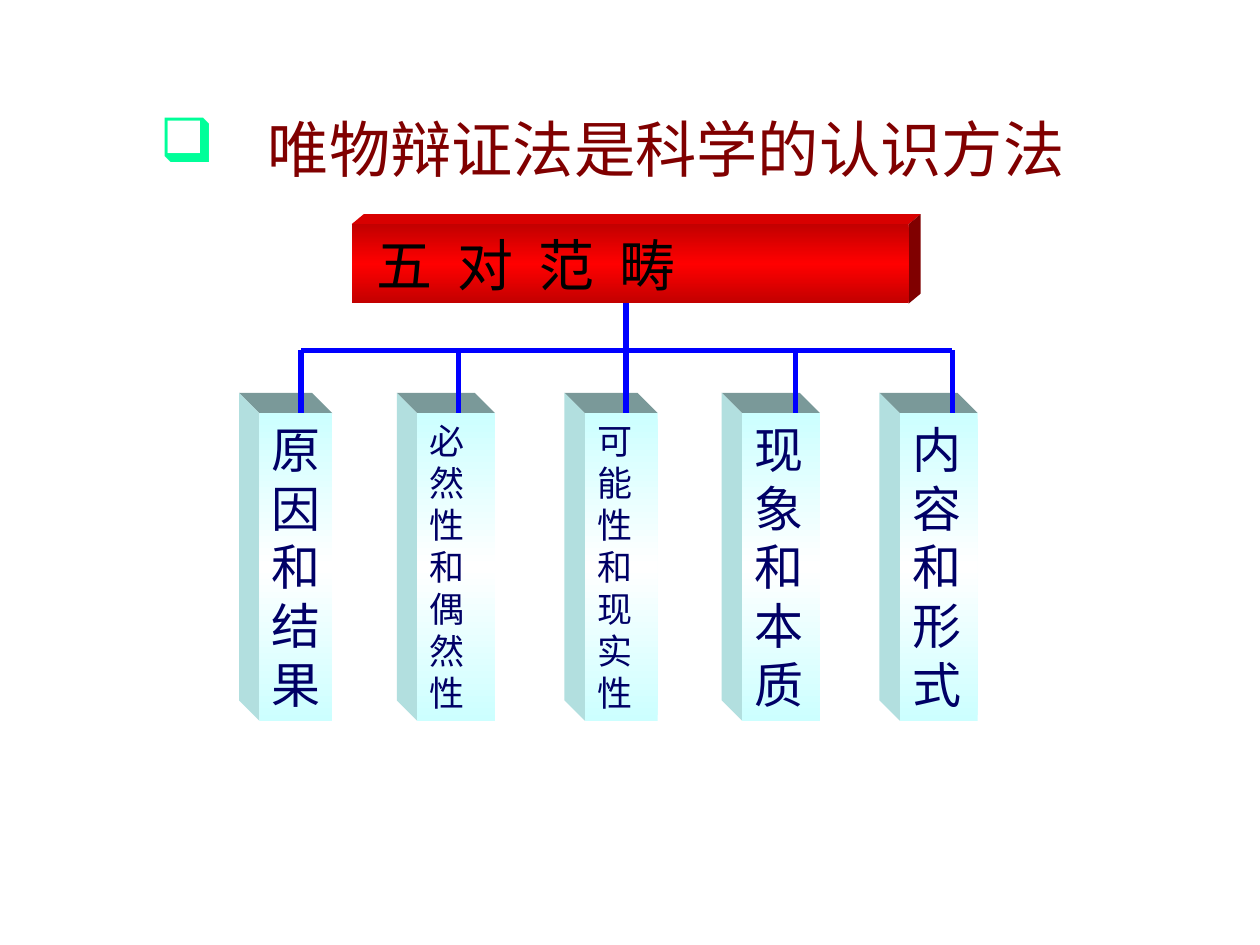
from copy import deepcopy

from pptx import Presentation
from pptx.dml.color import RGBColor
from pptx.enum.shapes import MSO_CONNECTOR, MSO_SHAPE
from pptx.enum.text import MSO_ANCHOR, PP_ALIGN
from pptx.oxml.ns import qn
from pptx.util import Cm, Pt
from lxml.etree import SubElement

BLACK = RGBColor(0x00, 0x00, 0x00)
MAROON = RGBColor(0x80, 0x00, 0x00)
MINT = RGBColor(0x00, 0xFF, 0x99)
BLUE = RGBColor(0x00, 0x00, 0xFF)
NAVY = RGBColor(0x00, 0x00, 0x66)
RED = RGBColor(0xFF, 0x00, 0x00)
DARK_RED = RGBColor(0xC2, 0x00, 0x00)
BANNER_TOP = RGBColor(0xD8, 0x00, 0x00)
BANNER_SIDE = RGBColor(0x80, 0x00, 0x00)
WHITE = RGBColor(0xFF, 0xFF, 0xFF)
PALE_CYAN = RGBColor(0xCC, 0xFF, 0xFF)
PILLAR_TOP = RGBColor(0x7A, 0x99, 0x99)
PILLAR_SIDE = RGBColor(0xB2, 0xDF, 0xDF)
CJK_FONT = "Noto Sans CJK SC"
LATIN_FONT = "Times New Roman"

PILLAR_TOP_Y = 8.33
PILLAR_HEIGHT = 6.2
BRANCH_Y = 7.06
PILLARS = [
    ("原因和结果", 5.23, 1.47, 6.07, 28),
    ("必然性和偶然性", 8.41, 1.57, 9.25, 20),
    ("可能性和现实性", 11.79, 1.47, 12.62, 20),
    ("现象和本质", 14.96, 1.57, 16.03, 28),
    ("内容和形式", 18.14, 1.57, 19.2, 28),
]


def style_text(frame, text, font_name, size, color):
    frame.word_wrap = True
    frame.vertical_anchor = MSO_ANCHOR.TOP
    paragraph = frame.paragraphs[0]
    paragraph.text = text
    paragraph.alignment = PP_ALIGN.LEFT
    run = paragraph.runs[0]
    run.font.name = font_name
    run.font.size = Pt(size)
    run.font.color.rgb = color
    SubElement(run.font._element, qn("a:ea")).set("typeface", CJK_FONT)
    return paragraph


def add_face(slide, points, color):
    corners = [(Cm(x), Cm(y)) for x, y in points]
    builder = slide.shapes.build_freeform(*corners[0])
    builder.add_line_segments(corners[1:], close=True)
    face = builder.convert_to_shape()
    face.shadow.inherit = False
    face.fill.solid()
    face.fill.fore_color.rgb = color
    face.line.fill.background()


def add_front(slide, left, top, width, height, edge, middle):
    front = slide.shapes.add_shape(
        MSO_SHAPE.RECTANGLE, Cm(left), Cm(top), Cm(width), Cm(height))
    front.shadow.inherit = False
    front.line.fill.background()
    front.fill.gradient()
    front.fill.gradient_angle = 90
    stop_list = front._element.spPr.find(".//" + qn("a:gsLst"))
    stop_list.append(deepcopy(stop_list[0]))
    for stop, position, color in zip(
            front.fill.gradient_stops, (0, 0.5, 1), (edge, middle, edge)):
        stop.position = position
        stop.color.rgb = color
    return front


def add_branch(slide, x1, y1, x2, y2):
    branch = slide.shapes.add_connector(
        MSO_CONNECTOR.STRAIGHT, Cm(x1), Cm(y1), Cm(x2), Cm(y2))
    branch.line.color.rgb = BLUE
    branch.line.width = Pt(3)
    SubElement(branch._element.spPr, qn("a:effectLst"))


def add_heading(slide, left, top, width, height):
    heading = slide.shapes.add_textbox(Cm(left), Cm(top), Cm(width), Cm(height))
    paragraph_props = heading.text_frame.paragraphs[0]._p.get_or_add_pPr()
    paragraph_props.set("marL", str(Cm(2.18)))
    paragraph_props.set("indent", str(-Cm(2.18)))
    bullet_color = SubElement(paragraph_props, qn("a:buClr"))
    SubElement(bullet_color, qn("a:srgbClr")).set("val", str(MINT))
    SubElement(paragraph_props, qn("a:buChar")).set("char", "❑")
    style_text(heading.text_frame, "唯物辩证法是科学的认识方法",
               "Noto Sans CJK JP", 35, MAROON)


def add_banner(slide, left, top, width, height):
    right, bottom = left + width, top + height
    depth_x, depth_y = 0.24, 0.2
    add_face(slide, [(left, top), (left + depth_x, top - depth_y),
                     (right + depth_x, top - depth_y), (right, top)], BANNER_TOP)
    add_face(slide, [(right, top), (right + depth_x, top - depth_y),
                     (right + depth_x, bottom - depth_y), (right, bottom)],
             BANNER_SIDE)
    front = add_front(slide, left, top, width, height, DARK_RED, RED)
    front.text_frame.margin_left = Cm(0.5)
    paragraph = style_text(front.text_frame, "五 对 范 畴", CJK_FONT, 32, BLACK)
    front.text_frame.vertical_anchor = MSO_ANCHOR.MIDDLE
    paragraph.runs[0].font._element.set("spc", "360")


def add_pillar(slide, left, top, width, height, category, size):
    right, bottom, depth = left + width, top + height, 0.41
    add_face(slide, [(left, top), (left - depth, top - depth),
                     (right - depth, top - depth), (right, top)], PILLAR_TOP)
    add_face(slide, [(left, top), (left - depth, top - depth),
                     (left - depth, bottom - depth), (left, bottom)], PILLAR_SIDE)
    front = add_front(slide, left, top, width, height, PALE_CYAN, WHITE)
    paragraph = style_text(front.text_frame, category, LATIN_FONT, size, NAVY)
    paragraph.line_spacing = Pt(size * 1.2)


def add_tree(slide):
    drops = [drop for _, _, _, drop, _ in PILLARS]
    add_branch(slide, drops[2], 6, drops[2], BRANCH_Y)
    add_banner(slide, 7.09, 4.52, 11.23, 1.6)
    for category, left, width, _, size in PILLARS:
        add_pillar(slide, left, PILLAR_TOP_Y, width, PILLAR_HEIGHT, category, size)
    add_branch(slide, drops[0], BRANCH_Y, drops[-1], BRANCH_Y)
    for drop in drops:
        add_branch(slide, drop, BRANCH_Y, drop, PILLAR_TOP_Y)


def main():
    presentation = Presentation()
    presentation.slide_width = Cm(25.4)
    presentation.slide_height = Cm(19.05)
    slide = presentation.slides.add_slide(presentation.slide_layouts[6])
    add_tree(slide)
    add_heading(slide, 2.97, 2.11, 20.12, 1.73)
    presentation.save("out.pptx")


if __name__ == "__main__":
    main()
